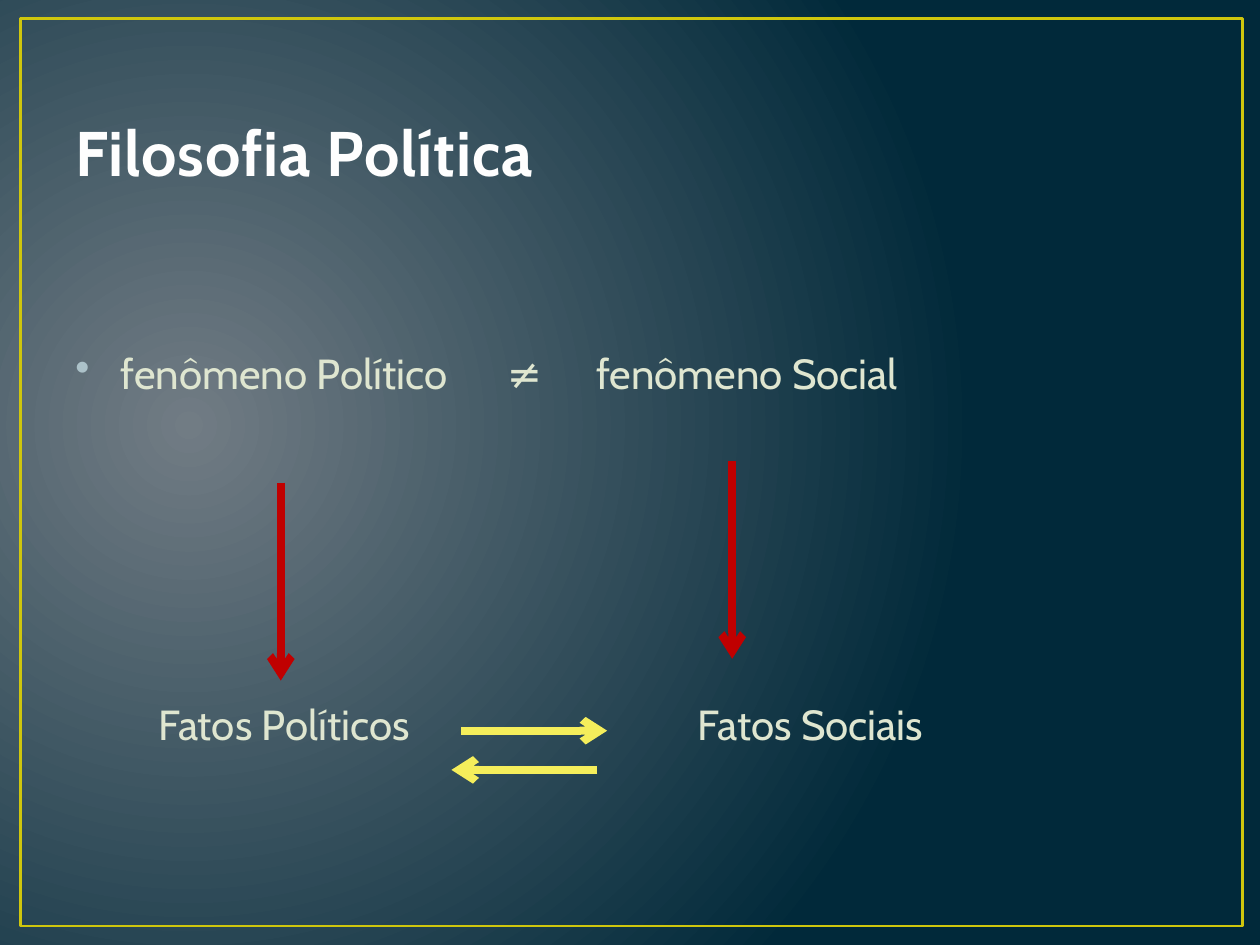
import dataclasses
import typing

import lxml.etree
import pptx
import pptx.dml.color
import pptx.enum.dml
import pptx.enum.shapes
import pptx.enum.text
import pptx.oxml.ns
import pptx.util

Cm = pptx.util.Cm
Pt = pptx.util.Pt
qn = pptx.oxml.ns.qn


@dataclasses.dataclass(frozen=True)
class Theme:
    font: str = "Cabin"
    title_size: float = 36
    body_size: float = 24
    arrow_width: float = 4.5
    frame_width: float = 1.5
    glow: str = "717C84"
    night: str = "01293A"
    frame: str = "CFC60D"
    title: str = "FEFEFE"
    body: str = "DFE6D0"
    bullet: str = "ACC2C9"
    cause: str = "C00000"
    exchange: str = "F5EE5B"


class Arrow(typing.NamedTuple):
    start: tuple[float, float]
    end: tuple[float, float]
    color: str


class Line(typing.NamedTuple):
    text: str
    margin: float
    tabs: tuple[float, ...]
    space_before: float
    bullet: str = ""


THEME = Theme()
ARROWS = (
    Arrow((5.66, 9.73), (5.66, 13.72), THEME.cause),
    Arrow((14.76, 9.3), (14.76, 13.28), THEME.cause),
    Arrow((9.3, 14.73), (12.24, 14.73), THEME.exchange),
    Arrow((12.04, 15.52), (9.1, 15.52), THEME.exchange),
)
LINES = (
    Line("fenômeno Político\t≠\tfenômeno Social", 0.92, (8.7, 10.5), 0, "•"),
    Line("Fatos Políticos\tFatos Sociais", 1.68, (10.87,), 172),
)


def rgb(color: str) -> pptx.dml.color.RGBColor:
    return pptx.dml.color.RGBColor.from_string(color)


def add_child(parent, tag: str, **attributes: str):
    return lxml.etree.SubElement(parent, qn(tag), attributes)


def paint_background(slide) -> None:
    fill = slide.background.fill
    fill.gradient()
    for stop, color in zip(fill.gradient_stops, (THEME.glow, THEME.night)):
        stop.color.rgb = rgb(color)
    gradient = next(slide.element.iter(qn("a:gradFill")))
    gradient.remove(gradient.find(qn("a:lin")))
    circle = add_child(gradient, "a:path", path="circle")
    add_child(circle, "a:fillToRect", l="15000", t="50000", r="85000", b="60000")


def add_frame(slide) -> None:
    frame = slide.shapes.add_shape(
        pptx.enum.shapes.MSO_SHAPE.RECTANGLE, Cm(0.41), Cm(0.38), Cm(24.64), Cm(18.29))
    frame.shadow.inherit = False
    frame.fill.background()
    frame.line.color.rgb = rgb(THEME.frame)
    frame.line.width = Pt(THEME.frame_width)


def add_text_frame(slide, top: float, height: float):
    text_frame = slide.shapes.add_textbox(Cm(1.27), Cm(top), Cm(22.86), Cm(height)).text_frame
    text_frame.word_wrap = True
    return text_frame


def set_font(paragraph, size: float, color: str, bold: bool = False) -> None:
    font = paragraph.font
    font.name, font.size, font.bold = THEME.font, Pt(size), bold
    font.color.rgb = rgb(color)


def add_title(slide, text: str) -> None:
    text_frame = add_text_frame(slide, 0.76, 3.18)
    text_frame.vertical_anchor = pptx.enum.text.MSO_ANCHOR.BOTTOM
    paragraph = text_frame.paragraphs[0]
    run = paragraph.add_run()
    run.text = text
    run.font._element.set("spc", "50")
    set_font(paragraph, THEME.title_size, THEME.title, True)


def add_body(slide, lines: typing.Sequence[Line]) -> None:
    text_frame = add_text_frame(slide, 6.88, 10.14)
    for index, line in enumerate(lines):
        paragraph = text_frame.add_paragraph() if index else text_frame.paragraphs[0]
        paragraph.text = line.text
        paragraph.space_before = Pt(line.space_before)
        properties = paragraph._p.get_or_add_pPr()
        properties.set("marL", str(Cm(line.margin)))
        if line.bullet:
            properties.set("indent", str(-Cm(line.margin)))
            add_child(add_child(properties, "a:buClr"), "a:srgbClr", val=THEME.bullet)
            add_child(properties, "a:buChar", char=line.bullet)
        tab_list = add_child(properties, "a:tabLst")
        for position in line.tabs:
            add_child(tab_list, "a:tab", pos=str(Cm(position)), algn="l")
        set_font(paragraph, THEME.body_size, THEME.body)


def add_arrow(slide, arrow: Arrow) -> None:
    connector = slide.shapes.add_connector(
        pptx.enum.shapes.MSO_CONNECTOR.STRAIGHT, *map(Cm, arrow.start + arrow.end))
    connector.line.color.rgb = rgb(arrow.color)
    connector.line.width = Pt(THEME.arrow_width)
    add_child(connector.line._get_or_add_ln(), "a:tailEnd", type="arrow")
    add_child(connector._element.spPr, "a:effectLst")


def main() -> None:
    """Build the slide on political and social phenomena."""
    presentation = pptx.Presentation()
    presentation.slide_width, presentation.slide_height = Cm(25.4), Cm(19.05)
    slide = presentation.slides.add_slide(presentation.slide_layouts[6])
    paint_background(slide)
    add_frame(slide)
    add_title(slide, "Filosofia Política")
    add_body(slide, LINES)
    for arrow in ARROWS:
        add_arrow(slide, arrow)
    presentation.save("out.pptx")


if __name__ == "__main__":
    main()
